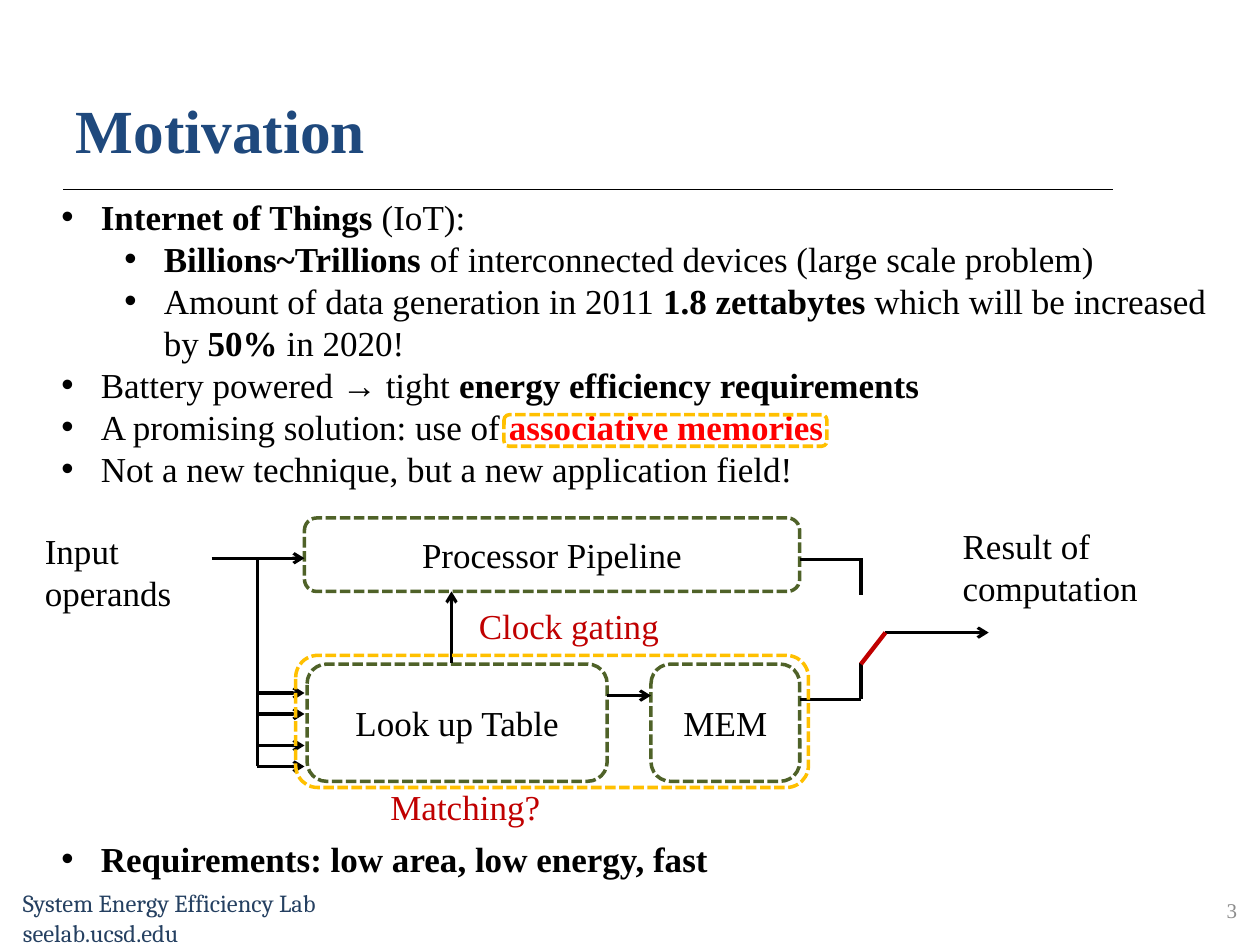
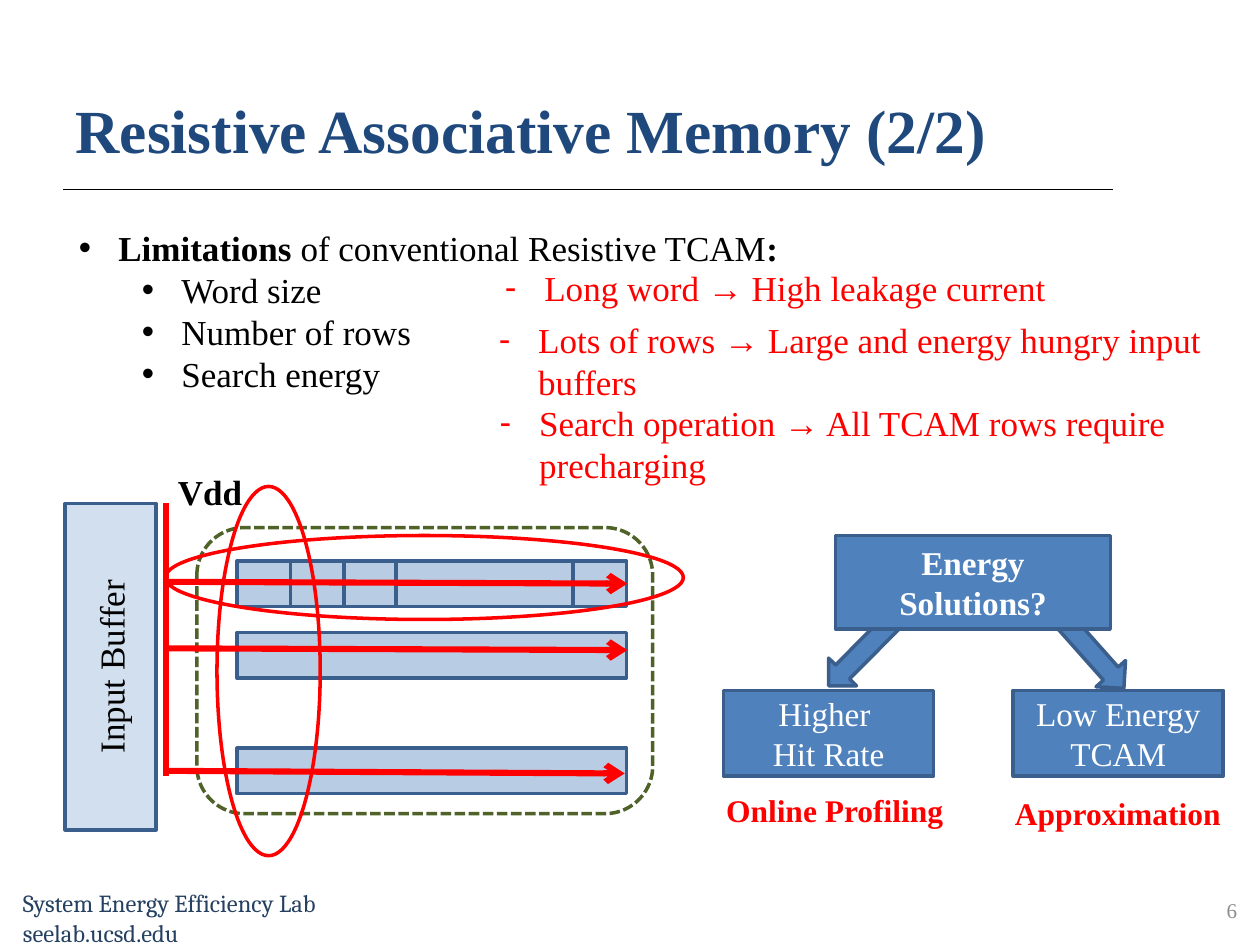
from itertools import pairwise

from lxml import etree
from pptx import Presentation
from pptx.dml.color import RGBColor
from pptx.enum.dml import MSO_LINE
from pptx.enum.shapes import MSO_CONNECTOR, MSO_SHAPE as Preset
from pptx.enum.text import MSO_ANCHOR as Anchor, MSO_AUTO_SIZE as Fit, PP_ALIGN as Align
from pptx.oxml.ns import qn
from pptx.util import Pt

THEME = {
    "serif": "Times New Roman", "footer_font": "Cambria",
    "title": "1F497D", "footer": "254061", "number": "8C8C8C",
    "ink": "000000", "paper": "FFFFFF", "red": "FF0000", "dark_red": "C00000",
    "green": "4F6228", "gold": "FFC000", "blue": "4F81BD", "blue_edge": "3A5F8C",
    "title_size": 35, "body": 20, "box": 19, "caption": 18, "footer_size": 14, "number_size": 12,
    "edge": 2, "wire": 1.75, "switch": 2.5, "current": 3.5, "rule": 0.5,
}

# ---- Content: boxes are (left, top, width, height), lines (x1, y1, x2, y2) ----
FOOTER = ["System Energy Efficiency Lab", "seelab.ucsd.edu"]

# Paragraphs are (level, runs); a run is text or (text, style)
MOTIVATION = [
    (0, [("Internet of Things", "bold"), " (IoT):"]),
    (1, [("Billions~Trillions", "bold"),
         " of interconnected devices (large scale problem)"]),
    (1, ["Amount of data generation in 2011 ", ("1.8 zettabytes ", "bold"),
         "which will be increased by ", ("50% ", "bold"), "in 2020!"]),
    (0, ["Battery powered → tight ", ("energy efficiency requirements", "bold")]),
    (0, ["A promising solution: use of ", ("associative memories", "key")]),
    (0, ["Not a new technique, but a new application field!"]),
]
REQUIREMENTS = [(0, [("Requirements: low area, low energy, fast", "bold")])]
BLOCKS = [
    ("Processor Pipeline", (174, 296, 283, 42)),
    ("Look up Table", (175.5, 379.5, 171.5, 67)),
    ("MEM", (372, 379.5, 85, 67)),
]
DIAGRAM_LABELS = [
    ("Input operands", (18.5, 299, 120, 55.5), "ink"),
    ("Result of computation", (543, 296, 163.5, 55.5), "ink"),
    ("Clock gating", (266.5, 342, 150.5, 31.5), "dark_red"),
    ("Matching?", (216, 445.5, 127.5, 31.5), "dark_red"),
]
BUS_X, SWITCH_X = 147, 492
LOOKUP_INPUTS = [396, 408, 426, 438]
SIGNALS = [(121, 319, 174, 319), (258, 379, 258, 338),
           (347, 397.5, 372, 397.5), (506, 361.5, 565, 361.5)]
WIRES = [(BUS_X, 438, BUS_X, 319),
         (457, 399.5, SWITCH_X, 399.5), (457, 319.5, SWITCH_X, 319.5),
         (SWITCH_X, 399.5, SWITCH_X, 379), (SWITCH_X, 340, SWITCH_X, 319)]
SWITCH = (SWITCH_X, 379.5, 506, 361.5)
HIGHLIGHTS = [(169, 374.5, 293, 75.5), (288, 237, 184.5, 18)]

LIMITATIONS = [
    (0, [("Limitations ", "bold"), "of conventional Resistive TCAM", (":", "bold")]),
    (1, ["Word size"]), (1, ["Number of rows"]), (1, ["Search energy"]),
]
EFFECTS = [
    ("Long word → High leakage current", (281.5, 149, 390, 31.5)),
    ("Lots of rows → Large and energy hungry input buffers", (278, 178.5, 417.5, 55.5)),
    ("Search operation → All TCAM rows require precharging", (278.5, 226, 435, 55.5)),
]
TCAM_ARRAY = (112.5, 301.5, 260.5, 163.5)
CELL_EDGES = [135.5, 166, 196.5, 226.5, 327.5, 358]
CELL_TOP, ROW_TOPS, ROW_HEIGHT = 320.5, [361.5, 427.5], 26
RINGS = [(94.5, 306, 296, 48), (124, 278, 59, 211)]
INPUT_BUFFER = (-30, 355, 186.5, 52)
SUPPLY = (95, 443.5, 95, 287.5)
MATCH_LINES = [(96.5, 332.5, 358.5, 333.5), (96.5, 370.5, 358.5, 371.5),
               (95, 440.5, 357, 442)]
BRANCH_ARROWS = [((564, 347, 94, 22.5), 48.4), ((459.5, 347, 95, 22.5), 134.8)]
SOLUTIONS = [
    (["Energy", "Solutions?"], (477.5, 306, 157, 53.5), True),
    (["Higher ", "Hit Rate"], (413.5, 394.5, 120, 49), False),
    (["Low Energy TCAM"], (579, 394.5, 120, 49), False),
]
METHODS = [("Online Profiling", (396, 448.5, 162, 29)),
           ("Approximation", (567.5, 450, 142.5, 29))]


# ---- Drawing helpers ----
def rgb(name):
    return RGBColor.from_string(THEME[name])


def points(values):
    return [Pt(value) for value in values]


def assign(target, values):
    for key, value in values.items():
        setattr(target, key, value)


def add_run(paragraph, text, color="ink", size="body", bold=False, font="serif"):
    run = paragraph.add_run()
    run.text = text
    assign(run.font, {"name": THEME[font], "size": Pt(THEME[size]), "bold": bold})
    run.font.color.rgb = rgb(color)


def write(frame, lines, align=Align.LEFT, **style):
    for index, line in enumerate(lines):
        paragraph = frame.add_paragraph() if index else frame.paragraphs[0]
        paragraph.alignment = align
        add_run(paragraph, line, **style)


def textbox(slide, box, fit=Fit.SHAPE_TO_FIT_TEXT, anchor=Anchor.TOP):
    frame = slide.shapes.add_textbox(*points(box)).text_frame
    assign(frame, {"word_wrap": True, "auto_size": fit, "vertical_anchor": anchor})
    return frame


def label(slide, text, box, **style):
    write(textbox(slide, box), [text], **style)


def bullets(slide, box, items, mark="•", color="ink"):
    frame = textbox(slide, box)
    for index, (level, runs) in enumerate(items):
        paragraph = frame.add_paragraph() if index else frame.paragraphs[0]
        paragraph.level = level
        properties = paragraph._p.get_or_add_pPr()
        properties.set("marL", str(Pt(22.5 + 36 * level)))
        properties.set("indent", str(Pt(-22.5)))
        etree.SubElement(properties, qn("a:buFont"), typeface="Arial")
        etree.SubElement(properties, qn("a:buChar"), char=mark)
        for run in runs:
            text, style = (run, "plain") if isinstance(run, str) else run
            add_run(paragraph, text, "red" if style == "key" else color,
                    bold=style != "plain")


def shape(slide, preset, box, edge, fill=None, opacity=None, dashed=False, rotation=0):
    item = slide.shapes.add_shape(preset, *points(box))
    item.shadow.inherit = False
    item.rotation = rotation
    item.line.color.rgb = rgb(edge)
    item.line.width = Pt(THEME["edge"])
    if dashed:
        item.line.dash_style = MSO_LINE.SQUARE_DOT
    if fill:
        item.fill.solid()
        item.fill.fore_color.rgb = rgb(fill)
    else:
        item.fill.background()
    if opacity:
        color = item.fill._xPr.find(qn("a:solidFill"))[0]
        etree.SubElement(color, qn("a:alpha"), val=str(opacity * 1000))
    assign(item.text_frame, {"word_wrap": True, "vertical_anchor": Anchor.MIDDLE})
    return item


def line(slide, ends, color="ink", width="wire", arrow=False):
    item = slide.shapes.add_connector(MSO_CONNECTOR.STRAIGHT, *points(ends))
    item.line.color.rgb = rgb(color)
    item.line.width = Pt(THEME[width])
    if arrow:
        etree.SubElement(item.line._get_or_add_ln(), qn("a:tailEnd"), type="arrow")
    etree.SubElement(item._element.spPr, qn("a:effectLst"))


def start_slide(deck, heading, number):
    slide = deck.slides.add_slide(deck.slide_layouts[5])
    write(textbox(slide, (6, 504, 228, 41)), FOOTER,
          color="footer", size="footer_size", font="footer_font")
    line(slide, (36, 108, 636, 108), width="rule")
    title = slide.shapes.title
    assign(title, dict(zip(("left", "top", "width", "height"), points((36, 30, 594, 68.5)))))
    assign(title.text_frame, {"vertical_anchor": Anchor.BOTTOM, "auto_size": Fit.NONE})
    write(title.text_frame, [heading], color="title", size="title_size", bold=True)
    write(textbox(slide, (546, 505.5, 168, 29), Fit.NONE, Anchor.MIDDLE), [number],
          Align.RIGHT, color="number", size="number_size")
    return slide


# ---- Slides ----
def motivation(deck):
    slide = start_slide(deck, "Motivation", "3")
    # Processor with the associative memory beside it
    for name, box in BLOCKS:
        block = shape(slide, Preset.ROUNDED_RECTANGLE, box, "green", dashed=True)
        write(block.text_frame, [name], Align.CENTER)
    taps = [(BUS_X, y, 174, y) for y in LOOKUP_INPUTS]
    for ends in SIGNALS + taps:
        line(slide, ends, arrow=True)
    for ends in WIRES:
        line(slide, ends)
    line(slide, SWITCH, "dark_red", "switch")
    # Text
    for text, box, color in DIAGRAM_LABELS:
        label(slide, text, box, color=color)
    bullets(slide, (28, 108, 686, 177), MOTIVATION)
    bullets(slide, (28, 475, 656, 31.5), REQUIREMENTS)
    for box in HIGHLIGHTS:
        shape(slide, Preset.ROUNDED_RECTANGLE, box, "gold", dashed=True)


def resistive_memory(deck):
    slide = start_slide(deck, "Resistive Associative Memory (2/2)", "6")
    # TCAM rows, the first one split into cells
    shape(slide, Preset.ROUNDED_RECTANGLE, TCAM_ARRAY, "green", dashed=True)
    row_left, row_right = CELL_EDGES[0], CELL_EDGES[-1]
    spans = [(row_left, row_right, top) for top in ROW_TOPS]
    spans += [(left, right, CELL_TOP) for left, right in pairwise(CELL_EDGES)]
    for left, right, top in spans:
        shape(slide, Preset.RECTANGLE, (left, top, right - left, ROW_HEIGHT),
              "blue_edge", "blue", opacity=40)
    # Limitations and their effects
    bullets(slide, (38, 126, 646, 104.5), LIMITATIONS)
    for text, box in EFFECTS:
        bullets(slide, box, [(0, [text])], "-", "red")
    for box in RINGS:
        shape(slide, Preset.OVAL, box, "red")
    # Input buffer and supply
    buffer = shape(slide, Preset.RECTANGLE, INPUT_BUFFER, "blue_edge", "blue",
                   opacity=25, rotation=270)
    write(buffer.text_frame, ["Input Buffer"], Align.CENTER)
    line(slide, SUPPLY, "red", "current")
    for ends in MATCH_LINES:
        line(slide, ends, "red", "current", arrow=True)
    label(slide, "Vdd", (94.5, 265.5, 60, 31.5), bold=True)
    # Solution tree
    for box, angle in BRANCH_ARROWS:
        shape(slide, Preset.RIGHT_ARROW, box, "blue_edge", "blue", rotation=angle)
    for lines, box, bold in SOLUTIONS:
        solution = shape(slide, Preset.RECTANGLE, box, "blue_edge", "blue")
        write(solution.text_frame, lines, Align.CENTER, color="paper", size="box", bold=bold)
    for text, box in METHODS:
        label(slide, text, box, align=Align.CENTER, color="red", size="caption", bold=True)


def main():
    deck = Presentation()
    assign(deck, {"slide_width": Pt(720), "slide_height": Pt(540)})
    motivation(deck)
    resistive_memory(deck)
    deck.save("out.pptx")


if __name__ == "__main__":
    main()
